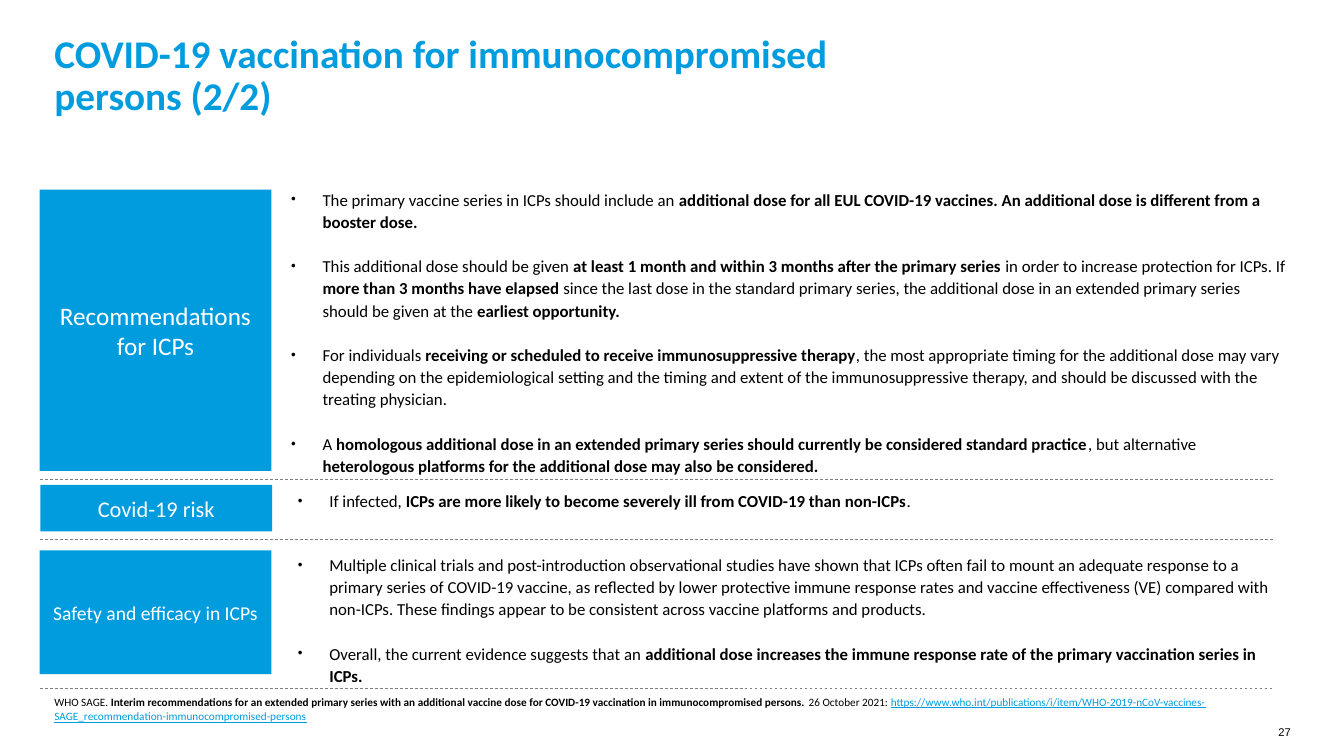
from lxml.etree import SubElement
from pptx import Presentation
from pptx.dml.color import RGBColor
from pptx.enum.dml import MSO_LINE
from pptx.enum.shapes import MSO_CONNECTOR as Link, MSO_SHAPE as Shape
from pptx.enum.text import MSO_ANCHOR as Anchor, MSO_AUTO_SIZE as Fit, PP_ALIGN as Align
from pptx.oxml.ns import qn
from pptx.util import Cm, Pt

BLUE, GREY, BLACK, WHITE = "009CDE", "808080", "000000", "FFFFFF"
FLAT = (0.05, 0, 0.05, 0)
PAD = (0.25, 0.13, 0.25, 0.13)


def color(code):
    return RGBColor.from_string(code)


class Page:
    font = "Calibri"

    def __init__(self, deck):
        self.slide = deck.slides.add_slide(deck.slide_layouts[5])
        self.shapes = self.slide.shapes

    def frame(self, shape, pad, anchor=Anchor.TOP):
        body = shape.text_frame
        body.word_wrap, body.auto_size = True, Fit.NONE
        body.vertical_anchor = anchor
        (body.margin_left, body.margin_top,
         body.margin_right, body.margin_bottom) = map(Cm, pad)
        return body

    def run(self, para, text, size, tone=BLACK, bold=False, line=False, font=None):
        run = para.add_run()
        run.text = text
        face = run.font
        face.name, face.size = font or self.font, Pt(size)
        face.bold, face.underline = bold, line
        face.color.rgb = color(tone)

    def mixed(self, para, parts, size):
        """Add runs that alternate between plain and bold."""
        for i, part in enumerate(parts):
            self.run(para, part, size, bold=i % 2 == 1)

    def title(self, text, *box):
        shape = self.shapes.title
        shape.left, shape.top, shape.width, shape.height = map(Cm, box)
        para = self.frame(shape, (0.05, 0, 0.99, 0), Anchor.BOTTOM).paragraphs[0]
        para.alignment, para.line_spacing = Align.LEFT, 0.9
        self.run(para, text, 28, BLUE, bold=True)

    def text(self, box, pad=FLAT):
        return self.frame(self.shapes.add_textbox(*map(Cm, box)), pad)

    def bullets(self, items, box, pad=PAD):
        body = self.text(box, pad)
        for i, parts in enumerate(items):
            para = body.add_paragraph() if i else body.paragraphs[0]
            para.line_spacing = 1.1
            para.space_before, para.space_after = Pt(10 if i else 0), Pt(6)
            props = para._p.get_or_add_pPr()
            props.set("marL", str(Cm(0.79)))
            props.set("indent", str(-Cm(0.79)))
            tint = SubElement(props, qn("a:buClr"))
            SubElement(tint, qn("a:srgbClr"), val=BLACK)
            SubElement(props, qn("a:buSzPct"), val="80000")
            SubElement(props, qn("a:buFont"), typeface="Arial")
            SubElement(props, qn("a:buChar"), char="•")
            self.mixed(para, parts, 12)

    def label(self, text, size, *box):
        shape = self.shapes.add_shape(Shape.RECTANGLE, *map(Cm, box))
        shape.shadow.inherit = False
        shape.fill.solid()
        shape.fill.fore_color.rgb = color(BLUE)
        shape.line.fill.background()
        para = self.frame(shape, PAD, Anchor.MIDDLE).paragraphs[0]
        para.alignment = Align.CENTER
        self.run(para, text, size, WHITE)

    def rule(self, left, top):
        line = self.shapes.add_connector(
            Link.STRAIGHT, *map(Cm, (left, top, left + 31.11, top)))
        line.line.color.rgb = color(GREY)
        line.line.width = Pt(0.5)
        line.line.dash_style = MSO_LINE.DASH
        SubElement(line._element.spPr, qn("a:effectLst"))


def main():
    deck = Presentation()
    deck.slide_width, deck.slide_height = Cm(33.87), Cm(19.05)
    page = Page(deck)
    page.title("COVID-19 vaccination for immunocompromised persons (2/2)",
               1.32, 0.99, 22.66, 2.01)

    # Row labels and dividers
    page.label("Recommendations for ICPs", 18, 1, 4.78, 5.84, 7.09)
    page.label("Covid-19 risk", 16, 1.02, 12.22, 5.84, 1.17)
    page.label("Safety and efficacy in ICPs", 14, 1, 13.87, 5.84, 3.12)
    for left, top in ((1.02, 12.09), (1.02, 13.59), (1, 17.35)):
        page.rule(left, top)

    # Recommendations
    page.bullets([
        ["The primary vaccine series in ICPs should include an ",
         "additional dose for all EUL COVID-19 vaccines. An additional dose is "
         "different from a booster dose."],
        ["This additional dose should be given",
         " at least 1 month and within 3 months after the primary series ",
         "in order to increase protection for ICPs. If ",
         "more than 3 months have elapsed",
         " since the last dose in the standard primary series, the additional dose "
         "in an extended primary series should be given at the ",
         "earliest opportunity."],
        ["For individuals ",
         "receiving or scheduled to receive immunosuppressive therapy",
         ", the most appropriate timing for the additional dose may vary depending "
         "on the epidemiological setting and the timing and extent of the "
         "immunosuppressive therapy, and should be discussed with the treating "
         "physician."],
        ["A ",
         "homologous additional dose in an extended primary series should currently "
         "be considered standard practice",
         ", but alternative ",
         "heterologous platforms for the additional dose may also be considered."],
    ], (7.29, 4.72, 25.25, 2.64), FLAT)

    # Risk
    page.bullets([
        ["If infected, ",
         "ICPs are more likely to become severely ill from COVID-19 than non-ICPs",
         "."],
    ], (7.26, 12.19, 25.25, 0.79))

    # Safety and efficacy
    page.bullets([
        ["Multiple clinical trials and post-introduction observational studies have "
         "shown that ICPs often fail to mount an adequate response to a primary "
         "series of COVID-19 vaccine, as reflected by lower protective immune "
         "response rates and vaccine effectiveness (VE) compared with non-ICPs. "
         "These findings appear to be consistent across vaccine platforms and "
         "products."],
        ["Overall, the current evidence suggests that an ",
         "additional dose increases the immune response rate of the primary "
         "vaccination series in ICPs."],
    ], (7.26, 13.79, 25.25, 3.61))

    # Reference and page number
    para = page.text((1.32, 17.48, 31.19, 0.79)).paragraphs[0]
    para.line_spacing = 1.1
    page.mixed(para, [
        "WHO SAGE. ",
        "Interim recommendations for an extended primary series with an additional "
        "vaccine dose for COVID-19 vaccination in immunocompromised persons. ",
        "26 October 2021: "], 8)
    page.run(para, "https://www.who.int/publications/i/item/WHO-2019-nCoV-vaccines-"
             "SAGE_recommendation-immunocompromised-persons", 8, BLUE, line=True)
    para = page.text((31.72, 18.29, 0.81, 0.51), (0, 0, 0, 0)).paragraphs[0]
    para.alignment = Align.RIGHT
    page.run(para, "27", 8, font="Arial")

    deck.save("out.pptx")


if __name__ == "__main__":
    main()
